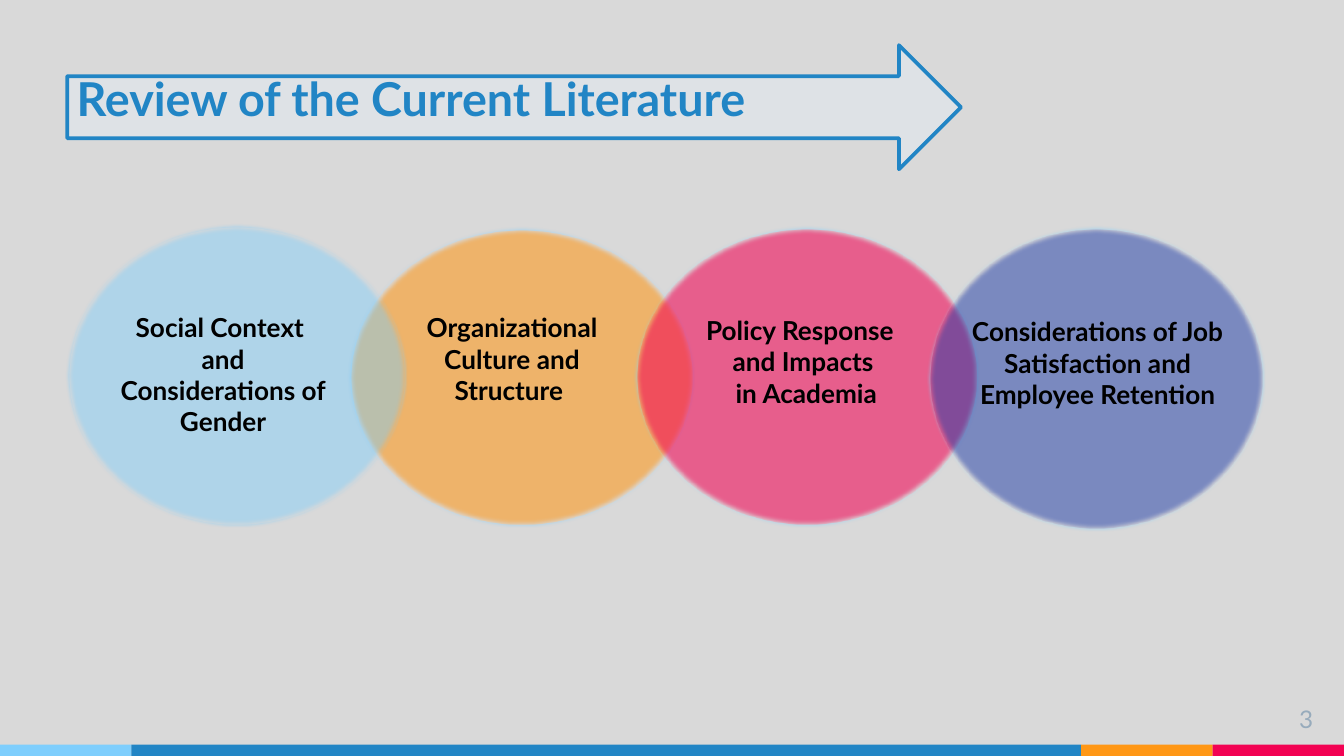
from lxml.etree import SubElement
from pptx import Presentation
from pptx.dml.color import RGBColor
from pptx.enum.shapes import MSO_SHAPE
from pptx.enum.text import PP_ALIGN
from pptx.oxml.ns import qn
from pptx.util import Pt

COLORS = {
    "background": "D9D9D9", "sky": "7ECEFD", "blue": "2185C5",
    "orange": "FF9715", "pink": "F20253", "indigo": "1C3AA9",
    "arrow": "DEE2E6", "text": "000000", "number": "97ABBC",
}
SLIDE_W, SLIDE_H = 720, 405

# Circle box, fill, opacity in percent, label box, label lines; back to front
TOPICS = [
    ((187.2, 122.4, 184.3, 159.1), "orange", 56, (221, 159.8, 106.6, 97.9),
     ["Organizational Culture and Structure "]),
    ((340.6, 121.7, 182.9, 159.8), "pink", 57, (337, 161.3, 186.5, 105.8),
     ["Policy Response ", "and Impacts", " in Academia"]),
    ((36, 121, 181.4, 160.6), "sky", 45, (54, 159.8, 131, 90.7),
     ["Social Context ", "and Considerations of Gender"]),
    ((497.5, 121.7, 179.3, 162), "indigo", 50, (473.8, 162, 231.8, 146.2),
     ["Considerations of Job ", "Satisfaction and ", "Employee Retention "]),
]


def rgb(name):
    return RGBColor.from_string(COLORS[name])


def add_shape(s, kind, box, fill, line=None):
    sp = s.shapes.add_shape(kind, *map(Pt, box))
    sp.shadow.inherit = False
    sp.fill.solid()
    sp.fill.fore_color.rgb = rgb(fill)
    if line:
        sp.line.color.rgb = rgb(line)
        sp.line.width = Pt(2)
    else:
        sp.line.fill.background()
    return sp


def add_text(s, box, lines, size, color="text", align=PP_ALIGN.CENTER, bold=True):
    tf = s.shapes.add_textbox(*map(Pt, box)).text_frame
    tf.word_wrap = True
    tf.margin_left = tf.margin_right = tf.margin_top = tf.margin_bottom = Pt(7.2)
    p = tf.paragraphs[0]
    p.alignment = align
    for i, line in enumerate(lines):
        if i:
            p.add_line_break()
        r = p.add_run()
        r.text = line
        r.font.name = "Lato"
        r.font.size = Pt(size)
        r.font.bold = bold
        r.font.color.rgb = rgb(color)


def add_footer(s, box):
    # Colour strip with the page number above its right end
    left, top, width, height = box
    end = 70.4
    widths = [end, width - 3 * end, end, end]
    for w, color in zip(widths, ["sky", "blue", "orange", "pink"]):
        add_shape(s, MSO_SHAPE.RECTANGLE, (left, top, w, height), color)
        left += w
    add_text(s, (left - 52.6, top - 29, 43.2, 24.5), ["3"], 13, "number",
             PP_ALIGN.RIGHT, bold=False)


def add_topic(s, box, fill, opacity, label_box, lines):
    # Translucent circle with a soft edge
    sp = add_shape(s, MSO_SHAPE.OVAL, box, fill, "sky")
    clr = sp._element.spPr.find(qn("a:solidFill"))[0]
    SubElement(clr, qn("a:alpha"), val=str(opacity * 1000))
    effects = sp._element.spPr.find(qn("a:effectLst"))
    SubElement(effects, qn("a:softEdge"), rad=str(Pt(2.5)))
    add_text(s, label_box, lines, 14)


def add_title(s, box):
    left, top, width, height = box
    add_shape(s, MSO_SHAPE.RIGHT_ARROW, box, "arrow", "blue")
    add_text(s, (left - 2, top + 6, width - 29.5, 43.2),
             ["Review of the Current Literature"], 25, "blue", PP_ALIGN.LEFT)


def main():
    prs = Presentation()
    prs.slide_width, prs.slide_height = Pt(SLIDE_W), Pt(SLIDE_H)
    s = prs.slides.add_slide(prs.slide_layouts[6])
    s.background.fill.solid()
    s.background.fill.fore_color.rgb = rgb("background")

    add_footer(s, (0, SLIDE_H - 6, SLIDE_W, 6))
    for topic in TOPICS:
        add_topic(s, *topic)
    add_title(s, (36, 24.2, 478.8, 66.5))
    prs.save("out.pptx")


if __name__ == "__main__":
    main()
